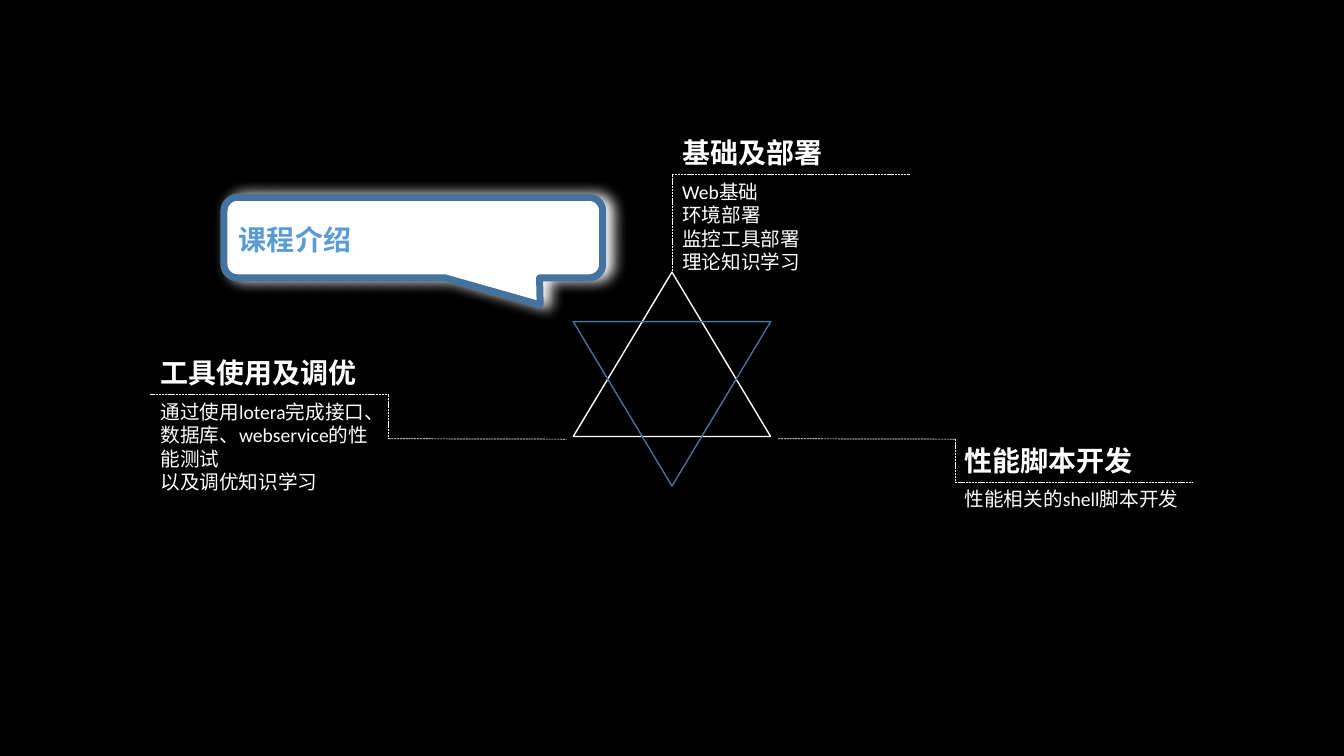
"""Build the course introduction slide with its star diagram and three topic panels."""
from dataclasses import dataclass

from lxml import etree
from pptx import Presentation
from pptx.dml.color import RGBColor
from pptx.enum.dml import MSO_LINE
from pptx.enum.shapes import MSO_CONNECTOR, MSO_SHAPE
from pptx.enum.text import MSO_ANCHOR, MSO_AUTO_SIZE, PP_ALIGN
from pptx.oxml.ns import qn
from pptx.util import Pt

BLACK = RGBColor(0x00, 0x00, 0x00)
WHITE = RGBColor(0xFF, 0xFF, 0xFF)
STEEL = RGBColor(0x43, 0x73, 0x9E)
BLUE = RGBColor(0x5B, 0x9B, 0xD5)

DASH = MSO_LINE.SQUARE_DOT
STRAIGHT = MSO_CONNECTOR.STRAIGHT
TRIANGLE = MSO_SHAPE.ISOSCELES_TRIANGLE
CALLOUT = MSO_SHAPE.ROUNDED_RECTANGULAR_CALLOUT
TOP = MSO_ANCHOR.TOP
LEFT = PP_ALIGN.LEFT
GROW = MSO_AUTO_SIZE.SHAPE_TO_FIT_TEXT

FONT = "Calibri"
PANEL_W = 170
HEADING_H = 31.5


@dataclass(frozen=True)
class Panel:
    x: float
    y: float
    heading: str
    lines: tuple[str, ...]
    rows: int


@dataclass(frozen=True)
class Line:
    x1: float
    y1: float
    x2: float
    y2: float


@dataclass(frozen=True)
class Triangle:
    y: float
    rotation: float
    color: RGBColor


PANELS = (
    Panel(480.2, 93.3, "基础及部署",
          ("Web基础", "环境部署", "监控工具部署", "理论知识学习"), 4),
    Panel(107.5, 250.5, "工具使用及调优",
          ("通过使用lotera完成接口、数据库、webservice的性能测试", "以及调优知识学习"), 4),
    Panel(682, 313, "性能脚本开发", ("性能相关的shell脚本开发",), 1),
)
LEADERS = (
    Line(480.2, 124.8, 480.2, 194.4),
    Line(277.5, 282, 277.5, 313.4),
    Line(277.5, 313.4, 404.6, 313.7),
    Line(555.8, 313.4, 682.6, 313.7),
    Line(682.6, 313.4, 682.6, 344.5),
)
TRIANGLES = (Triangle(194.4, 0, WHITE), Triangle(229.8, 180, STEEL))


def fill_text(sp, lines: tuple[str, ...], size: float, color: RGBColor, bold: bool) -> None:
    tf = sp.text_frame
    tf.word_wrap = True
    tf.auto_size = GROW
    tf.vertical_anchor = TOP
    tf.text = "\n".join(lines)
    for p in tf.paragraphs:
        p.alignment = LEFT
        p.font.name = FONT
        p.font.size = Pt(size)
        p.font.bold = bold
        p.font.color.rgb = color


def add_line(s, line: Line) -> None:
    cx = s.shapes.add_connector(STRAIGHT, Pt(line.x1), Pt(line.y1), Pt(line.x2), Pt(line.y2))
    cx.line.color.rgb = WHITE
    cx.line.width = Pt(0.5)
    cx.line.dash_style = DASH
    etree.SubElement(cx._element.spPr, qn("a:effectLst"))


def add_panel(s, panel: Panel) -> None:
    rule_y = panel.y + HEADING_H
    sp = s.shapes.add_textbox(Pt(panel.x), Pt(panel.y), Pt(PANEL_W), Pt(HEADING_H))
    fill_text(sp, (panel.heading,), 20, WHITE, True)
    body_h = 7.2 + 16.8 * panel.rows
    sp = s.shapes.add_textbox(Pt(panel.x), Pt(rule_y), Pt(PANEL_W), Pt(body_h))
    fill_text(sp, panel.lines, 14, WHITE, False)
    add_line(s, Line(panel.x, rule_y, panel.x + PANEL_W, rule_y))


def add_star(s) -> None:
    group = s.shapes.add_group_shape()
    for triangle in TRIANGLES:
        sp = group.shapes.add_shape(TRIANGLE, Pt(409.5), Pt(triangle.y), Pt(141), Pt(117.4))
        sp.shadow.inherit = False
        sp.rotation = triangle.rotation
        sp.fill.background()
        sp.line.color.rgb = triangle.color
        sp.line.width = Pt(1)


def add_callout(s) -> None:
    sp = s.shapes.add_shape(CALLOUT, Pt(160), Pt(141), Pt(270.5), Pt(57.5))
    for i, value in enumerate((0.335, 0.836, 0.167)):
        sp.adjustments[i] = value
    sp.fill.solid()
    sp.fill.fore_color.rgb = WHITE
    sp.line.color.rgb = STEEL
    sp.line.width = Pt(5)
    sp.shadow.inherit = False
    effects = sp._element.spPr.find(qn("a:effectLst"))
    shadow = etree.SubElement(effects, qn("a:outerShdw"), blurRad=str(Pt(10)),
                              dist=str(Pt(5)), dir="0", algn="ctr", rotWithShape="0")
    etree.SubElement(shadow, qn("a:srgbClr"), val=str(WHITE))


def add_title(s) -> None:
    title = s.shapes.title
    title.left, title.top, title.width, title.height = Pt(163.5), Pt(155.5), Pt(270), Pt(31.5)
    fill_text(title, ("课程介绍",), 20, BLUE, True)
    s.shapes._spTree.append(title._element)


def main() -> None:
    prs = Presentation()
    prs.slide_width, prs.slide_height = Pt(960), Pt(540)
    s = prs.slides.add_slide(prs.slide_layouts[5])
    s.background.fill.solid()
    s.background.fill.fore_color.rgb = BLACK
    add_star(s)
    for panel in PANELS:
        add_panel(s, panel)
    for leader in LEADERS:
        add_line(s, leader)
    add_callout(s)
    add_title(s)
    prs.save("out.pptx")


if __name__ == "__main__":
    main()
